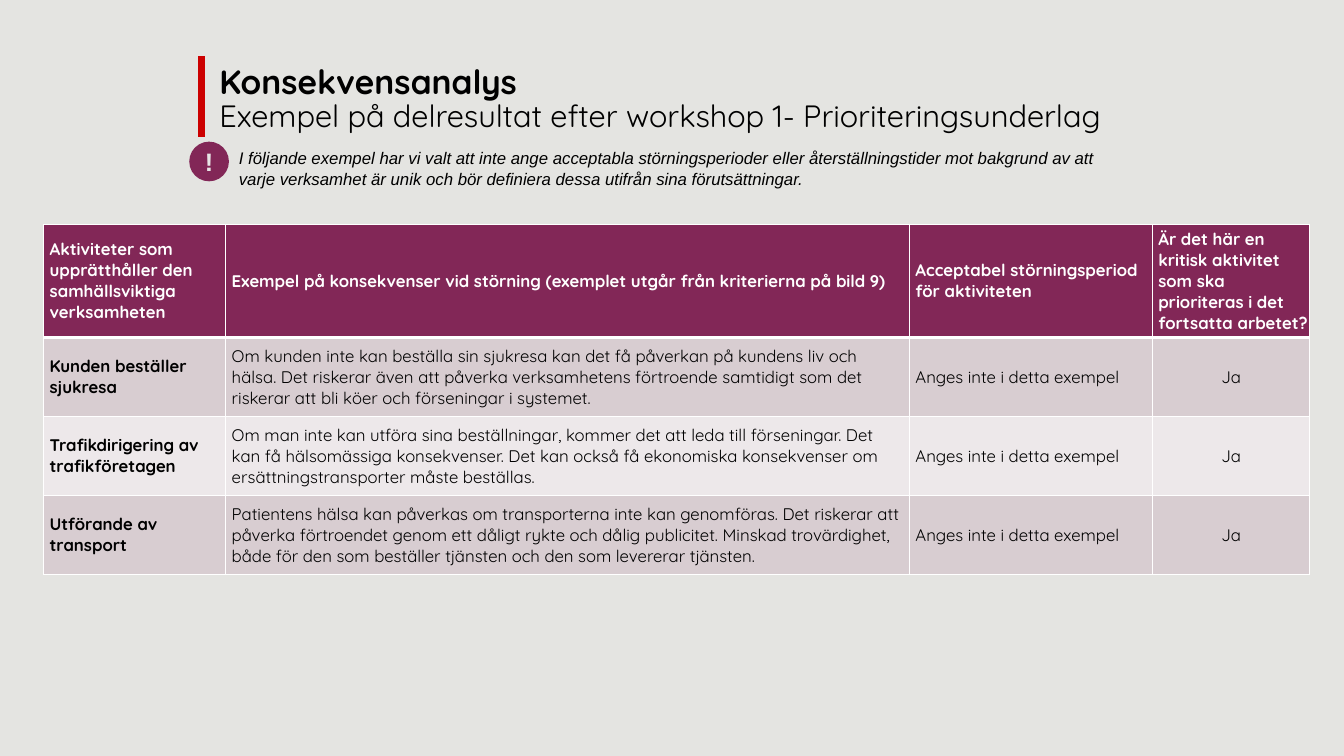
from lxml.etree import SubElement
from pptx import Presentation
from pptx.dml.color import RGBColor
from pptx.enum.shapes import MSO_CONNECTOR, MSO_SHAPE
from pptx.enum.text import MSO_ANCHOR, PP_ALIGN
from pptx.oxml.ns import qn
from pptx.util import Cm, Pt

COLORS = {
    "back": "E4E4E1", "plum": "822757", "rose": "D8CDD1", "pale": "EDE8EA",
    "red": "CC0000", "white": "FFFFFF", "black": "000000", "mark": "E7E6E6",
}
UNSET = "Anges inte i detta exempel"
HEADS = [
    "Aktiviteter som upprätthåller den samhällsviktiga verksamheten",
    "Exempel på konsekvenser vid störning (exemplet utgår från kriterierna på bild 9)",
    "Acceptabel störningsperiod\nför aktiviteten",
    "Är det här en kritisk aktivitet som ska prioriteras i det fortsatta arbetet?",
]
TASKS = [
    ("Kunden beställer sjukresa",
     "Om kunden inte kan beställa sin sjukresa kan det få påverkan på kundens liv och hälsa. "
     "Det riskerar även att påverka verksamhetens förtroende samtidigt som det riskerar att "
     "bli köer och förseningar i systemet."),
    ("Trafikdirigering av trafikföretagen",
     "Om man inte kan utföra sina beställningar, kommer det att leda till förseningar. "
     "Det kan få hälsomässiga konsekvenser. Det kan också få ekonomiska konsekvenser om "
     "ersättningstransporter måste beställas."),
    ("Utförande av transport",
     "Patientens hälsa kan påverkas om transporterna inte kan genomföras. Det riskerar att "
     "påverka förtroendet genom ett dåligt rykte och dålig publicitet. Minskad trovärdighet, "
     "både för den som beställer tjänsten och den som levererar tjänsten."),
]


def color(name):
    return RGBColor.from_string(COLORS[name])


class Deck:
    """Holds the style and the current slide, and draws each kind of element."""

    def __init__(self, head="Quicksand", body="Arial"):
        self.head, self.body = head, body
        self.file = Presentation()
        self.file.slide_width, self.file.slide_height = Cm(33.87), Cm(19.05)
        self.slide = self.file.slides.add_slide(self.file.slide_layouts[6])
        self.slide.background.fill.solid()
        self.slide.background.fill.fore_color.rgb = color("back")

    def font(self, item, name, size, tint="black", bold=False, italic=False):
        font = item.font
        font.name, font.size = name, Pt(size)
        font.bold, font.italic = bold, italic
        font.color.rgb = color(tint)

    def box(self, x, y, w, h):
        frame = self.slide.shapes.add_textbox(Cm(x), Cm(y), Cm(w), Cm(h)).text_frame
        frame.word_wrap = True
        return frame

    def title(self, top, sub, *area):
        frame = self.box(*area)
        frame.vertical_anchor = MSO_ANCHOR.MIDDLE
        para = frame.paragraphs[0]
        para.line_spacing = 0.9
        for text, size, bold in ((top, 24, True), (sub, 22, False)):
            run = para.add_run()
            run.text = text
            self.font(run, self.head, size, bold=bold)
            if text == top:
                para.add_line_break()

    def note(self, text, *area):
        para = self.box(*area).paragraphs[0]
        para.text = text
        para.space_after = Pt(12)
        self.font(para, self.body, 12, italic=True)

    def rule(self, x, top, end):
        line = self.slide.shapes.add_connector(
            MSO_CONNECTOR.STRAIGHT, Cm(x), Cm(top), Cm(x), Cm(end))
        line.line.color.rgb = color("red")
        line.line.width = Pt(5)
        SubElement(line._element.spPr, qn("a:effectLst"))

    def badge(self, text, x, y, size):
        disc = self.slide.shapes.add_shape(
            MSO_SHAPE.OVAL, Cm(x), Cm(y), Cm(size), Cm(size))
        disc.shadow.inherit = False
        disc.fill.solid()
        disc.fill.fore_color.rgb = color("plum")
        disc.line.fill.background()
        frame = disc.text_frame
        frame.margin_left = frame.margin_right = 0
        frame.margin_top = frame.margin_bottom = 0
        frame.vertical_anchor = MSO_ANCHOR.MIDDLE
        para = frame.paragraphs[0]
        para.text = text
        para.alignment = PP_ALIGN.CENTER
        self.font(para, self.body, 18, "mark", bold=True)

    def edge(self, cell, side, width):
        line = SubElement(cell._tc.get_or_add_tcPr(), qn(f"a:ln{side}"), w=str(Pt(width)))
        fill = SubElement(line, qn("a:solidFill"))
        SubElement(fill, qn("a:srgbClr"), val=COLORS["white"])

    def cell(self, cell, text, row, col):
        top = row == 0
        for side in "LRTB" if top else "LRB":
            self.edge(cell, side, 3 if top and side == "B" else 1)
        cell.fill.solid()
        cell.fill.fore_color.rgb = color("plum" if top else ("pale", "rose")[row % 2])
        cell.vertical_anchor = MSO_ANCHOR.MIDDLE
        cell.margin_left = Cm(0.15)
        cell.margin_right = Cm(0 if top else 0.15)
        cell.margin_top = cell.margin_bottom = Cm(0.1 if top else 0.2)
        para = cell.text_frame.paragraphs[0]
        para.text = text
        if col == 3 and not top:
            para.alignment = PP_ALIGN.CENTER
        self.font(para, self.head, 12, "white" if top else "black", top or col == 0)

    def table(self, rows, x, y, height, wide, high):
        frame = self.slide.shapes.add_table(
            len(rows), len(wide), Cm(x), Cm(y), Cm(sum(wide)), Cm(height))
        grid = frame.table
        grid.first_row = grid.horz_banding = False
        for col, width in zip(grid.columns, wide):
            col.width = Cm(width)
        for row, size in zip(grid.rows, high):
            row.height = Cm(size)
        frame.height = Cm(height)
        for r, row in enumerate(rows):
            for c, text in enumerate(row):
                self.cell(grid.cell(r, c), text, r, c)


def main():
    deck = Deck()
    rows = [HEADS] + [(task, risk, UNSET, "Ja") for task, risk in TASKS]
    deck.table(rows, 1.1, 5.66, 8.51, (4.59, 17.23, 6.12, 3.97), (2.11, 1.4, 1.4, 1.4))
    deck.title("Konsekvensanalys",
               "Exempel på delresultat efter workshop 1- Prioriteringsunderlag",
               5.28, 1.5, 27.71, 2.03)
    deck.rule(5.08, 1.42, 3.44)
    deck.note("I följande exempel har vi valt att inte ange acceptabla störningsperioder eller "
              "återställningstider mot bakgrund av att varje verksamhet är unik och bör "
              "definiera dessa utifrån sina förutsättningar.", 5.77, 3.61, 23.11, 1.27)
    deck.badge("!", 4.77, 3.57, 1)
    deck.file.save("out.pptx")


if __name__ == "__main__":
    main()
